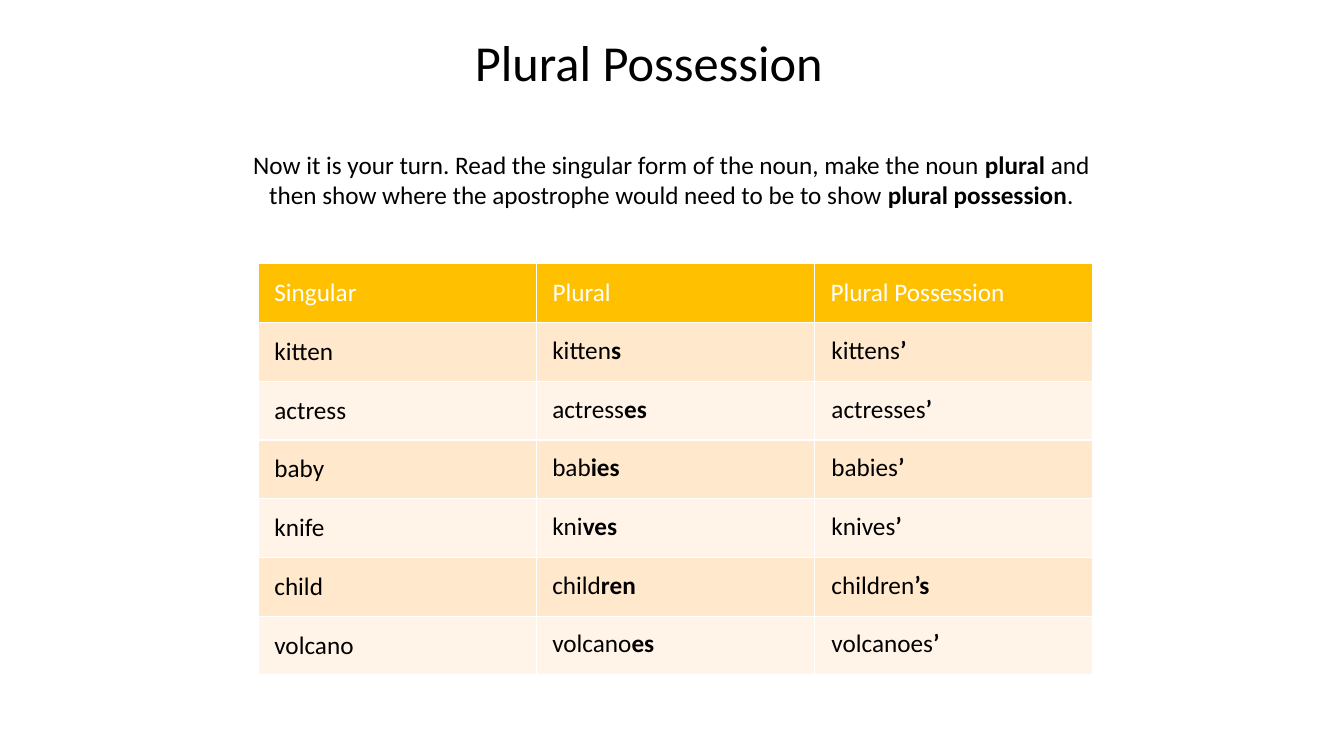
from dataclasses import dataclass

from lxml.etree import SubElement
from pptx import Presentation
from pptx.dml.color import RGBColor as RGB
from pptx.enum.text import MSO_ANCHOR as Anchor, MSO_AUTO_SIZE as AutoSize, PP_ALIGN as Align
from pptx.oxml.ns import qn
from pptx.util import Pt


@dataclass(frozen=True)
class Theme:
    font: str = "Calibri"
    title_size: float = 36
    text_size: float = 18
    dark: str = "000000"
    light: str = "FFFFFF"
    header: str = "FFC000"
    bands: tuple[str, str] = ("FFE8CC", "FFF4E7")


@dataclass(frozen=True)
class Box:
    left: float
    top: float
    width: float
    height: float

    def lengths(self) -> list[Pt]:
        return [Pt(v) for v in (self.left, self.top, self.width, self.height)]


@dataclass(frozen=True)
class Noun:
    singular: str
    plural: tuple[str, str]
    possession: tuple[str, str]


THEME = Theme()
ROW_HEIGHT = 42
COLUMN_WIDTH = 198.7
TABLE = Box(184.5, 188.3, 3 * COLUMN_WIDTH, 7 * ROW_HEIGHT)
ANSWER_TOP, ANSWER_PITCH = 235.2, 41.9
ANSWER_LEFTS = (387.4, 586.8)
HEADINGS = ("Singular", "Plural", "Plural Possession")
NOUNS = (
    Noun("kitten", ("kitten", "s"), ("kittens", "’")),
    Noun("actress", ("actress", "es"), ("actresses", "’")),
    Noun("baby", ("bab", "ies"), ("babies", "’")),
    Noun("knife", ("kni", "ves"), ("knives", "’")),
    Noun("child", ("child", "ren"), ("children", "’s")),
    Noun("volcano", ("volcano", "es"), ("volcanoes", "’")),
)
INSTRUCTION = (
    "Now it is your turn. Read the singular form of the noun, make the noun ",
    "plural ",
    "and then show where the apostrophe would need to be to show ",
    "plural possession",
    ".",
)


def write(tf, *parts: str, size: float = THEME.text_size, color: str = THEME.dark,
          align: Align = Align.LEFT) -> None:
    """Write parts as runs, every second one in bold."""
    p = tf.paragraphs[0]
    p.alignment = align
    for i, part in enumerate(parts):
        r = p.add_run()
        r.text = part
        r.font.name = THEME.font
        r.font.size = Pt(size)
        r.font.bold = i % 2 == 1
        r.font.color.rgb = RGB.from_string(color)


def add_title(slide, text: str) -> None:
    sp = slide.shapes.title
    sp.left, sp.top, sp.width, sp.height = Box(61, 5, 805, 78).lengths()
    sp.text_frame.vertical_anchor = Anchor.MIDDLE
    write(sp.text_frame, text, size=THEME.title_size, align=Align.CENTER)


def add_text(slide, box: Box, *parts: str, align: Align = Align.LEFT):
    tf = slide.shapes.add_textbox(*box.lengths()).text_frame
    tf.word_wrap = True
    tf.auto_size = AutoSize.SHAPE_TO_FIT_TEXT
    write(tf, *parts, align=align)
    return tf


def format_cell(cell, fill: str) -> None:
    cell.margin_left = Pt(11.5)
    cell.margin_top = cell.margin_right = cell.margin_bottom = 0
    cell.vertical_anchor = Anchor.MIDDLE
    tc_pr = cell._tc.get_or_add_tcPr()
    for edge in ("a:lnL", "a:lnR", "a:lnT", "a:lnB"):
        ln = SubElement(tc_pr, qn(edge), w=str(Pt(1)))
        SubElement(SubElement(ln, qn("a:solidFill")), qn("a:srgbClr"), val=THEME.light)
    cell.fill.solid()
    cell.fill.fore_color.rgb = RGB.from_string(fill)


def add_noun_table(slide) -> None:
    table = slide.shapes.add_table(len(NOUNS) + 1, len(HEADINGS), *TABLE.lengths()).table
    table.first_row = table.horz_banding = False
    for column in table.columns:
        column.width = Pt(COLUMN_WIDTH)
    for i, row in enumerate(table.rows):
        row.height = Pt(ROW_HEIGHT)
        for cell in row.cells:
            format_cell(cell, THEME.bands[(i - 1) % 2] if i else THEME.header)
    for j, heading in enumerate(HEADINGS):
        write(table.cell(0, j).text_frame, heading, color=THEME.light)
    for i, noun in enumerate(NOUNS, 1):
        write(table.cell(i, 0).text_frame, noun.singular)


def add_answers(slide) -> None:
    for i, noun in enumerate(NOUNS):
        top = ANSWER_TOP + i * ANSWER_PITCH
        for left, parts in zip(ANSWER_LEFTS, (noun.plural, noun.possession)):
            add_text(slide, Box(left, top, 187, 30), *parts)


def main() -> None:
    prs = Presentation()
    prs.slide_width, prs.slide_height = Pt(960), Pt(540)
    slide = prs.slides.add_slide(prs.slide_layouts[5])
    add_title(slide, "Plural Possession")
    tf = add_text(slide, Box(179, 101, 601, 55), *INSTRUCTION, align=Align.CENTER)
    tf.margin_left = tf.margin_right = 0
    tf.margin_top = tf.margin_bottom = Pt(5.8)
    add_noun_table(slide)
    add_answers(slide)
    prs.save("out.pptx")


if __name__ == "__main__":
    main()
